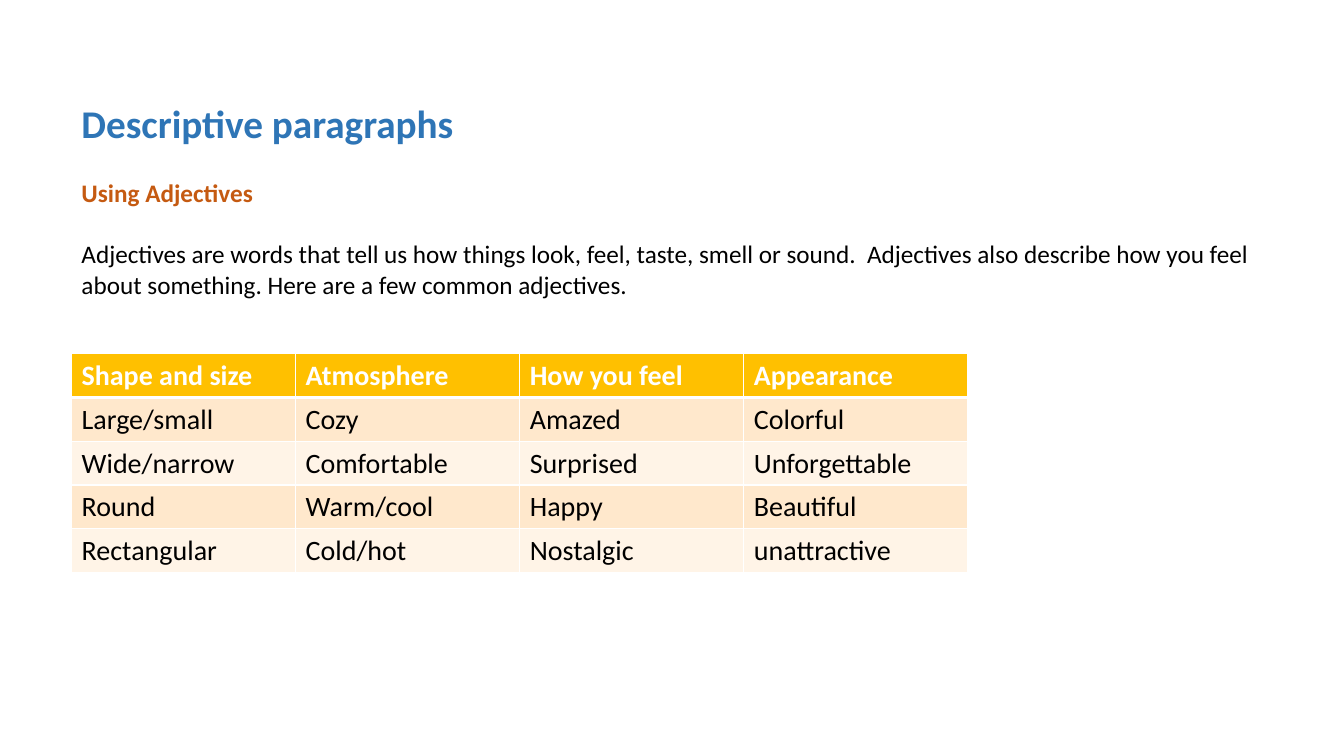
from lxml.etree import SubElement
from pptx import Presentation
from pptx.dml.color import RGBColor
from pptx.oxml.ns import qn
from pptx.util import Inches, Pt

WHITE = RGBColor(0xFF, 0xFF, 0xFF)
BLACK = RGBColor(0x00, 0x00, 0x00)
BLUE = RGBColor(0x2E, 0x75, 0xB6)
RUST = RGBColor(0xC5, 0x5A, 0x11)
GOLD = RGBColor(0xFF, 0xC0, 0x00)
PEACH = RGBColor(0xFF, 0xE8, 0xCC)
CREAM = RGBColor(0xFF, 0xF4, 0xE7)

INTRODUCTION = (
    "Adjectives are words that tell us how things look, feel, taste, smell or sound.  "
    "Adjectives also describe how you feel about something. "
    "Here are a few common adjectives."
)
ADJECTIVES = [
    ("Shape and size", "Atmosphere", "How you feel", "Appearance"),
    ("Large/small", "Cozy", "Amazed", "Colorful"),
    ("Wide/narrow", "Comfortable", "Surprised", "Unforgettable"),
    ("Round", "Warm/cool", "Happy", "Beautiful"),
    ("Rectangular", "Cold/hot", "Nostalgic", "unattractive"),
]


def write(paragraph, text, font="Calibri", size=18, color=BLACK, bold=False, before=0):
    paragraph.space_before = Pt(before)
    run = paragraph.add_run()
    run.text = text
    run.font.name = font
    run.font.size = Pt(size)
    run.font.color.rgb = color
    run.font.bold = bold


def set_borders(cell, color, bottom_width):
    """Draw 1 pt lines around a cell, with its own width for the bottom one."""
    properties = cell._tc.get_or_add_tcPr()
    widths = {"a:lnL": 1, "a:lnR": 1, "a:lnT": 1, "a:lnB": bottom_width}
    for position, (tag, width) in enumerate(widths.items()):
        line = SubElement(properties, qn(tag), w=str(Pt(width)))
        fill = SubElement(line, qn("a:solidFill"))
        SubElement(fill, qn("a:srgbClr"), val=str(color))
        properties.insert(position, line)


class LessonSlide:
    def __init__(self, presentation, font="Calibri"):
        self.slide = presentation.slides.add_slide(presentation.slide_layouts[6])
        self.font = font

    def add_text(self, left, top, width, height, paragraphs):
        """Add a text box; each paragraph is a text and its format."""
        box = self.slide.shapes.add_textbox(
            Inches(left), Inches(top), Inches(width), Inches(height))
        frame = box.text_frame
        frame.word_wrap = True
        for index, (text, style) in enumerate(paragraphs):
            paragraph = frame.add_paragraph() if index else frame.paragraphs[0]
            write(paragraph, text, font=self.font, **style)

    def add_table(self, left, top, width, height, rows):
        """Add a table with a gold header row and banded body rows."""
        table = self.slide.shapes.add_table(
            len(rows), len(rows[0]),
            Inches(left), Inches(top), Inches(width), Inches(height)).table
        for row_index, row in enumerate(rows):
            header = row_index == 0
            band = PEACH if row_index % 2 else CREAM
            for column_index, text in enumerate(row):
                cell = table.cell(row_index, column_index)
                cell.fill.solid()
                cell.fill.fore_color.rgb = GOLD if header else band
                set_borders(cell, WHITE, bottom_width=3 if header else 1)
                write(cell.text_frame.paragraphs[0], text, font=self.font, size=20,
                      color=WHITE if header else BLACK, bold=header)


def main():
    presentation = Presentation()
    presentation.slide_width = Inches(13.33)
    presentation.slide_height = Inches(7.5)
    lesson = LessonSlide(presentation)
    lesson.add_text(0.71, 0.94, 11.88, 2.39, [
        ("Descriptive paragraphs", dict(size=28, color=BLUE, bold=True)),
        ("Using Adjectives", dict(color=RUST, bold=True, before=22)),
        (INTRODUCTION, dict(before=22)),
    ])
    lesson.add_table(0.71, 3.51, 8.89, 2.17, ADJECTIVES)
    presentation.save("out.pptx")


if __name__ == "__main__":
    main()
